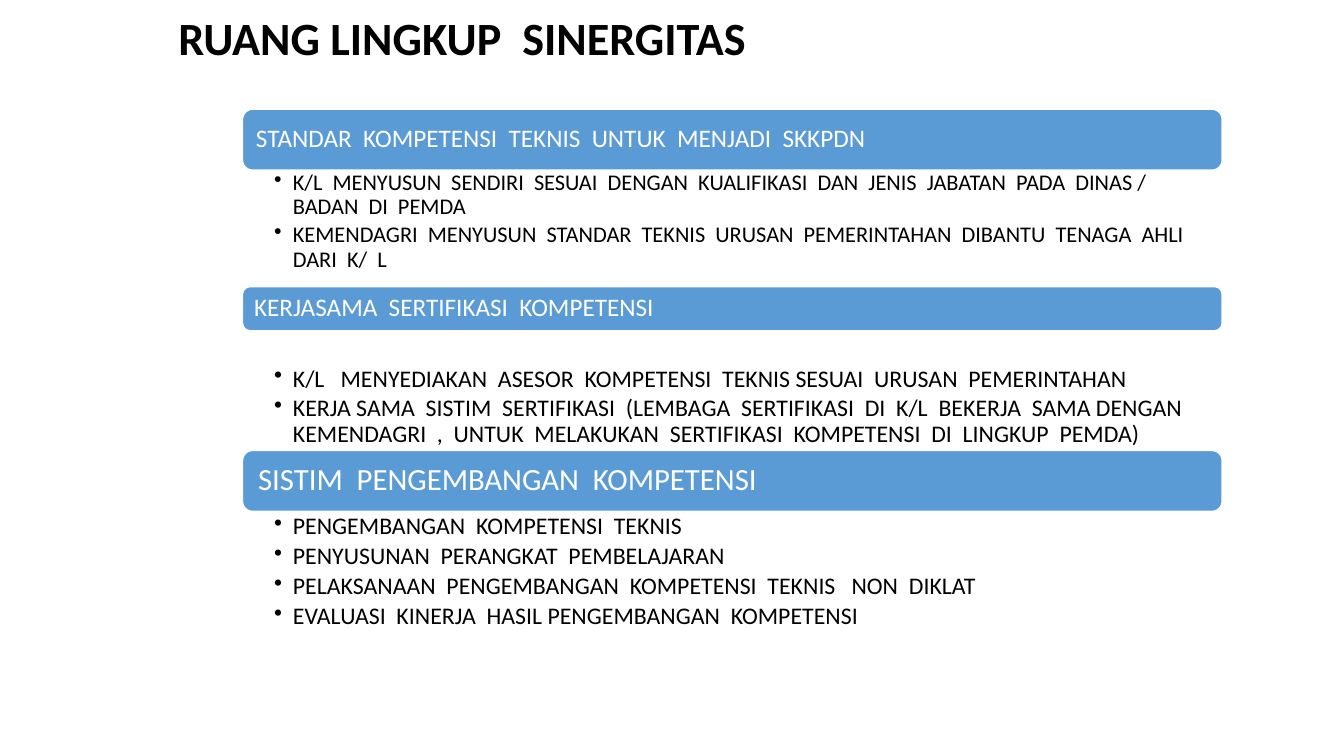
"""Build the slide on the scope of synergy, with three headed sections."""
from dataclasses import dataclass

from lxml.etree import SubElement
from pptx import Presentation
from pptx.dml.color import RGBColor
from pptx.enum.shapes import MSO_SHAPE
from pptx.enum.text import MSO_ANCHOR, PP_ALIGN
from pptx.oxml.ns import qn
from pptx.slide import Slide
from pptx.text.text import TextFrame
from pptx.util import Pt

EMU_PER_PX = 9525
FONT = "Calibri"
BLACK = RGBColor(0x00, 0x00, 0x00)
WHITE = RGBColor(0xFF, 0xFF, 0xFF)
BLUE = RGBColor(0x5B, 0x9B, 0xD5)
SECTION_LEFT, SECTION_WIDTH = 231, 933
BULLET_INDENT = 18


@dataclass(frozen=True)
class Box:
    left: int
    top: int
    width: int
    height: int


@dataclass(frozen=True)
class Section:
    heading: str
    heading_size: int
    bar_top: int
    bar_height: int
    bar_inset: int
    items: tuple[str, ...]
    item_size: int
    items_top: int
    items_height: int
    items_inset: tuple[int, int, int, int]


SECTIONS = (
    Section(
        "STANDAR  KOMPETENSI  TEKNIS  UNTUK  MENJADI  SKKPDN", 18, 104, 58, 10,
        (
            "K/L  MENYUSUN  SENDIRI  SESUAI  DENGAN  KUALIFIKASI  DAN  JENIS  JABATAN  PADA  DINAS /  BADAN  DI  PEMDA",
            "KEMENDAGRI  MENYUSUN  STANDAR  TEKNIS  URUSAN  PEMERINTAHAN  DIBANTU  TENAGA  AHLI  DARI  K/  L",
        ),
        16, 161, 105, (30, 2, 12, 2),
    ),
    Section(
        "KERJASAMA  SERTIFIKASI  KOMPETENSI", 18, 273, 42, 9,
        (
            "K/L   MENYEDIAKAN  ASESOR  KOMPETENSI  TEKNIS SESUAI  URUSAN  PEMERINTAHAN",
            "KERJA SAMA  SISTIM  SERTIFIKASI  (LEMBAGA  SERTIFIKASI  DI  K/L  BEKERJA  SAMA DENGAN  KEMENDAGRI  ,  UNTUK  MELAKUKAN  SERTIFIKASI  KOMPETENSI  DI  LINGKUP  PEMDA)",
        ),
        17, 346, 120, (30, 3, 16, 3),
    ),
    Section(
        "SISTIM  PENGEMBANGAN  KOMPETENSI", 22, 429, 58, 12,
        (
            "PENGEMBANGAN  KOMPETENSI  TEKNIS",
            "PENYUSUNAN  PERANGKAT  PEMBELAJARAN",
            "PELAKSANAAN  PENGEMBANGAN  KOMPETENSI  TEKNIS   NON  DIKLAT",
            "EVALUASI  KINERJA  HASIL PENGEMBANGAN  KOMPETENSI",
        ),
        17, 487, 130, (30, 3, 16, 3),
    ),
)


def px(length: int) -> int:
    """Turn pixels into EMU."""
    return length * EMU_PER_PX


def place(box: Box) -> tuple[int, int, int, int]:
    """Give the position and size of a box in EMU."""
    return px(box.left), px(box.top), px(box.width), px(box.height)


def write(frame: TextFrame, lines: tuple[str, ...], size: int, color: RGBColor,
          inset: tuple[int, int, int, int], anchor: MSO_ANCHOR,
          bold: bool = False, bulleted: bool = False) -> None:
    """Fill a text frame with one paragraph per line."""
    frame.word_wrap = True
    frame.vertical_anchor = anchor
    frame.margin_left, frame.margin_top, frame.margin_right, frame.margin_bottom = map(px, inset)
    for index, line in enumerate(lines):
        paragraph = frame.add_paragraph() if index else frame.paragraphs[0]
        paragraph.alignment = PP_ALIGN.LEFT
        paragraph.line_spacing = 0.9
        run = paragraph.add_run()
        run.text = line
        run.font.name = FONT
        run.font.size = Pt(size)
        run.font.bold = bold
        run.font.color.rgb = color
        if bulleted:
            paragraph.space_after = Pt(3)
            properties = paragraph._p.get_or_add_pPr()
            properties.set("marL", str(px(BULLET_INDENT)))
            properties.set("indent", str(-px(BULLET_INDENT)))
            SubElement(properties, qn("a:buChar")).set("char", "•")


def draw_section(slide: Slide, section: Section) -> None:
    """Draw a heading bar and the bulleted list below it."""
    bar_box = Box(SECTION_LEFT, section.bar_top, SECTION_WIDTH, section.bar_height)
    bar = slide.shapes.add_shape(MSO_SHAPE.ROUNDED_RECTANGLE, *place(bar_box))
    bar.shadow.inherit = False
    bar.fill.solid()
    bar.fill.fore_color.rgb = BLUE
    bar.line.color.rgb = WHITE
    bar.line.width = Pt(1)
    write(bar.text_frame, (section.heading,), section.heading_size, WHITE,
          (section.bar_inset, 0, section.bar_inset, 0), MSO_ANCHOR.MIDDLE)
    items_box = Box(SECTION_LEFT, section.items_top, SECTION_WIDTH, section.items_height)
    items = slide.shapes.add_textbox(*place(items_box))
    write(items.text_frame, section.items, section.item_size, BLACK,
          section.items_inset, MSO_ANCHOR.TOP, bulleted=True)


def main() -> None:
    """Build and save the presentation."""
    presentation = Presentation()
    presentation.slide_width, presentation.slide_height = px(1280), px(720)
    slide = presentation.slides.add_slide(presentation.slide_layouts[6])
    title = slide.shapes.add_textbox(*place(Box(160, 0, 816, 77)))
    write(title.text_frame, ("RUANG LINGKUP  SINERGITAS",), 33, BLACK,
          (10, 5, 10, 5), MSO_ANCHOR.MIDDLE, bold=True)
    for section in SECTIONS:
        draw_section(slide, section)
    presentation.save("out.pptx")


if __name__ == "__main__":
    main()
